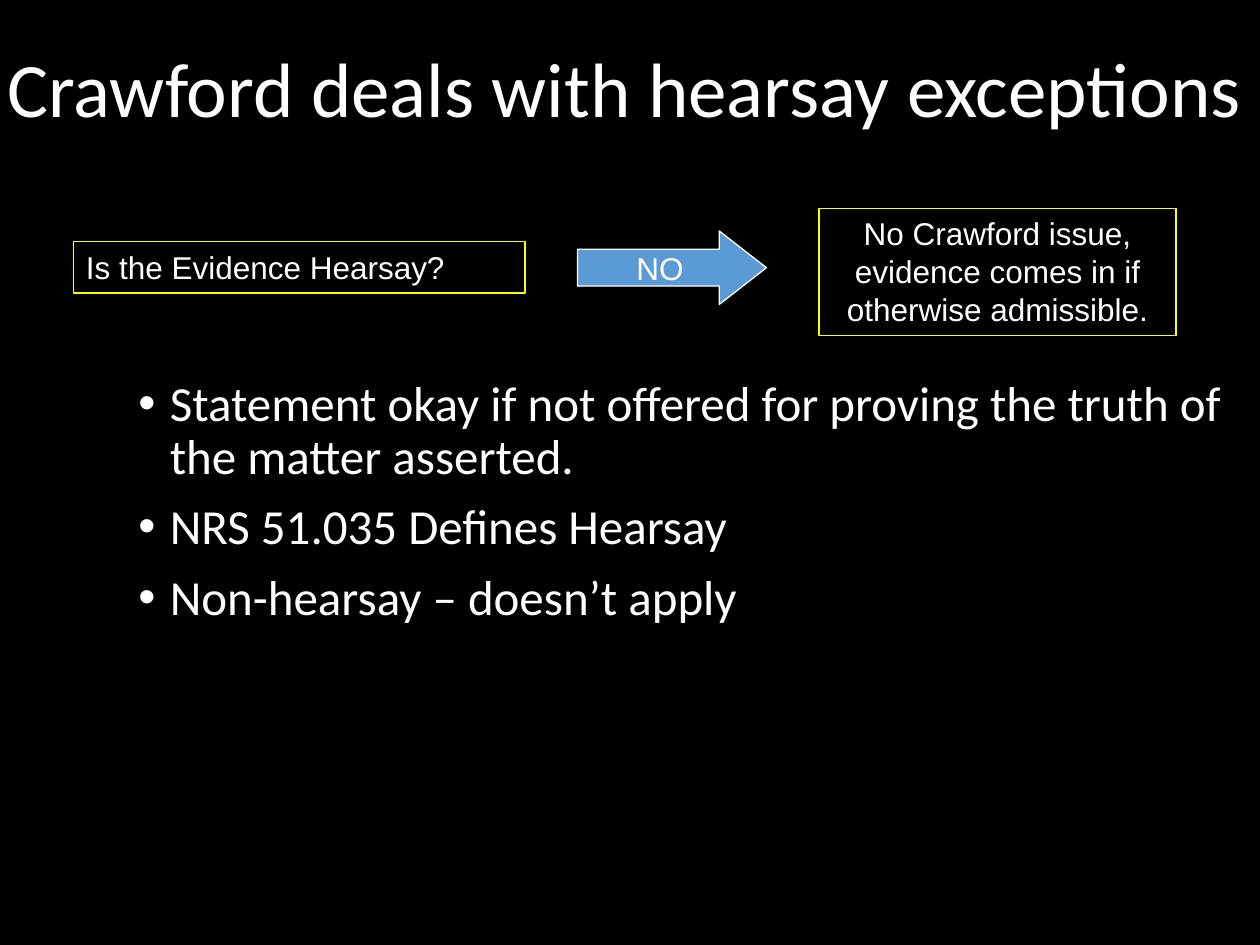
"""Build a slide on the hearsay question that precedes a Crawford analysis."""
from dataclasses import dataclass
from typing import Optional

import pptx
import pptx.dml.color
import pptx.enum.shapes
import pptx.enum.text
import pptx.oxml
import pptx.oxml.ns
import pptx.util

Pt = pptx.util.Pt
Align = pptx.enum.text.PP_ALIGN
Anchor = pptx.enum.text.MSO_ANCHOR
Shape = pptx.enum.shapes.MSO_SHAPE


@dataclass(frozen=True)
class Theme:
    """Colours, fonts and type sizes of the slide."""
    background: str = "000000"
    text: str = "FFFFFF"
    box_line: str = "FFFF00"
    arrow_fill: str = "5B9BD5"
    arrow_line: str = "FFFFFF"
    heading_font: str = "Calibri"
    flow_font: str = "Arial"
    title_size: float = 44
    bullet_size: float = 28
    flow_size: float = 18
    line_width: float = 0.75


@dataclass(frozen=True)
class FlowStep:
    """One shape of the question-and-answer row."""
    text: str
    left: float
    top: float
    width: float
    height: float
    line: str
    fill: Optional[str] = None
    kind: Shape = Shape.RECTANGLE
    align: Align = Align.CENTER
    anchor: Anchor = Anchor.TOP
    wrap: bool = True
    adjustments: tuple[float, ...] = ()


THEME = Theme()
TITLE = "Crawford deals with hearsay exceptions"
BULLETS = (
    "Statement okay if not offered for proving the truth of the matter asserted.",
    "NRS 51.035 Defines Hearsay",
    "Non-hearsay – doesn’t apply",
)
STEPS = (
    FlowStep("Is the Evidence Hearsay?", 42, 138, 258, 29.5, THEME.box_line,
             align=Align.LEFT),
    FlowStep("NO", 330, 132, 108, 42, THEME.arrow_line, THEME.arrow_fill,
             Shape.RIGHT_ARROW, anchor=Anchor.MIDDLE, wrap=False,
             adjustments=(0.5, 0.643)),
    FlowStep("No Crawford issue, evidence comes in if otherwise admissible.",
             468, 119, 204, 72.7, THEME.box_line),
)


def colour(code: str) -> pptx.dml.color.RGBColor:
    """Return the colour for a hexadecimal code."""
    return pptx.dml.color.RGBColor.from_string(code)


def add_span(para, text: str, font: str, size: float) -> None:
    """Add one formatted run to a paragraph."""
    span = para.add_run()
    span.text = text
    span.font.name = font
    span.font.size = Pt(size)
    span.font.color.rgb = colour(THEME.text)


def set_title(page) -> None:
    """Place and fill the title placeholder."""
    box = page.shapes.title
    box.left, box.top, box.width, box.height = Pt(-66), Pt(8), Pt(846), Pt(90)
    box.text_frame.vertical_anchor = Anchor.MIDDLE
    para = box.text_frame.paragraphs[0]
    para.alignment = Align.CENTER
    para.line_spacing = 0.9
    add_span(para, TITLE, THEME.heading_font, THEME.title_size)


def set_bullet(para, indent: float) -> None:
    """Give a paragraph a round bullet with a hanging indent."""
    properties = para._p.get_or_add_pPr()
    properties.set("marL", str(Pt(indent)))
    properties.set("indent", str(-Pt(indent)))
    for tag, name, value in (("a:buFont", "typeface", "Arial"),
                             ("a:buChar", "char", "•")):
        element = pptx.oxml.parse_xml(
            f'<{tag} {pptx.oxml.ns.nsdecls("a")} {name}="{value}"/>')
        properties.append(element)


def add_bullets(page) -> None:
    """Add the bulleted list below the row."""
    frame = page.shapes.add_textbox(Pt(72), Pt(213), Pt(648), Pt(354)).text_frame
    frame.word_wrap = True
    for index, text in enumerate(BULLETS):
        para = frame.add_paragraph() if index else frame.paragraphs[0]
        para.line_spacing = 0.9
        para.space_before = Pt(10)
        set_bullet(para, 18)
        add_span(para, text, THEME.heading_font, THEME.bullet_size)


def add_step(page, step: FlowStep) -> None:
    """Draw one shape of the row with its text."""
    box = page.shapes.add_shape(step.kind, Pt(step.left), Pt(step.top),
                                Pt(step.width), Pt(step.height))
    box.shadow.inherit = False
    for index, value in enumerate(step.adjustments):
        box.adjustments[index] = value
    if step.fill:
        box.fill.solid()
        box.fill.fore_color.rgb = colour(step.fill)
    else:
        box.fill.background()
    box.line.color.rgb = colour(step.line)
    box.line.width = Pt(THEME.line_width)
    frame = box.text_frame
    frame.word_wrap = step.wrap
    frame.vertical_anchor = step.anchor
    para = frame.paragraphs[0]
    para.alignment = step.align
    add_span(para, step.text, THEME.flow_font, THEME.flow_size)


def main() -> None:
    """Build and save the deck."""
    deck = pptx.Presentation()
    deck.slide_width, deck.slide_height = Pt(720), Pt(540)
    page = deck.slides.add_slide(deck.slide_layouts.get_by_name("Title Only"))
    page.background.fill.solid()
    page.background.fill.fore_color.rgb = colour(THEME.background)
    set_title(page)
    add_bullets(page)
    for step in STEPS:
        add_step(page, step)
    deck.save("out.pptx")


if __name__ == "__main__":
    main()
